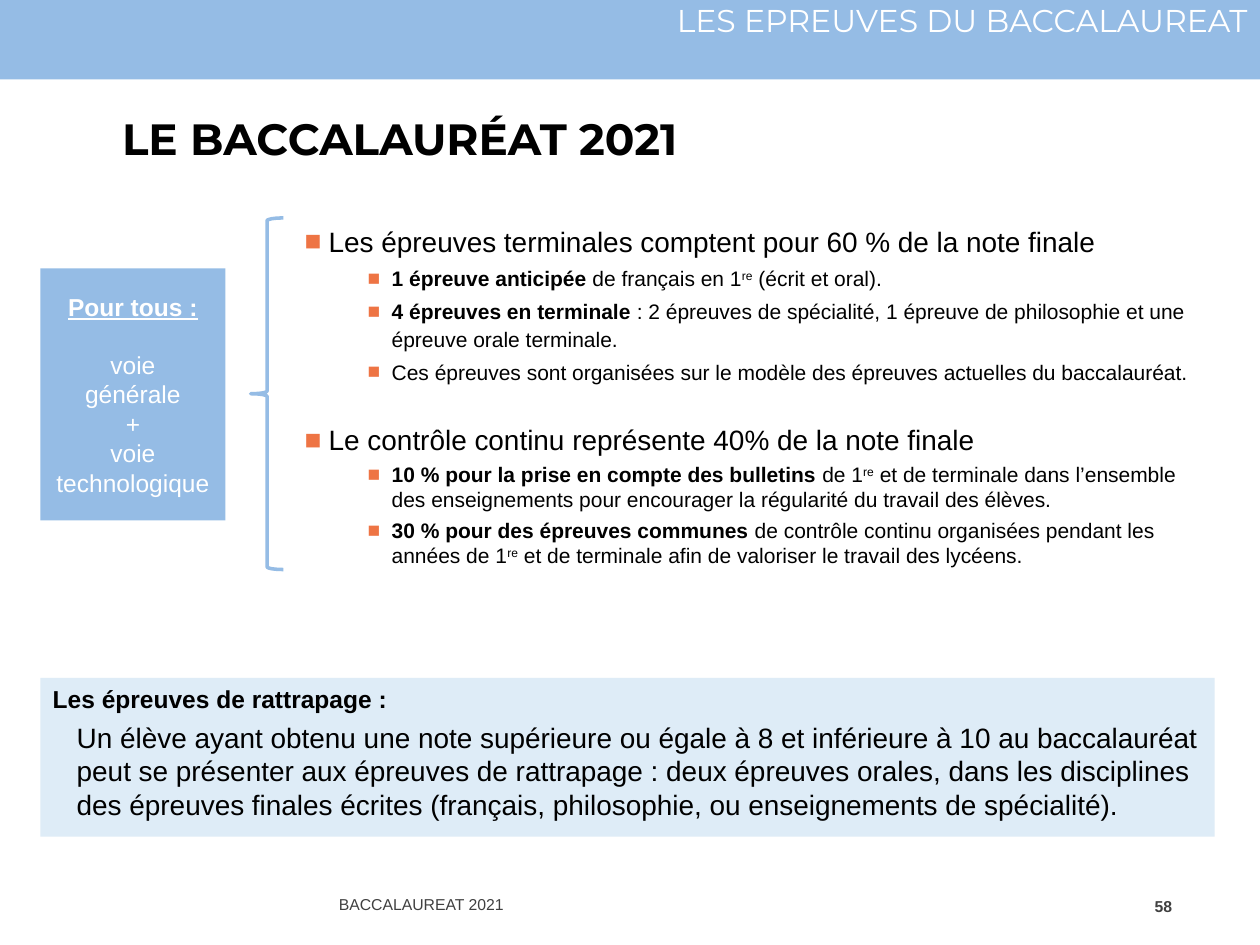
from dataclasses import dataclass
from lxml import etree
from pptx import Presentation
from pptx.dml.color import RGBColor
from pptx.enum import shapes, text
from pptx.oxml import ns
from pptx.util import Inches, Pt

BLUE, PALE, ORANGE = "95BCE5", "DEECF7", "EE7444"
WHITE, BLACK, GREY = "FFFFFF", "000000", "404040"
LEFT, MID, RIGHT = text.PP_ALIGN.LEFT, text.PP_ALIGN.CENTER, text.PP_ALIGN.RIGHT
TOP, CENTRE = text.MSO_ANCHOR.TOP, text.MSO_ANCHOR.MIDDLE
Box = tuple[float, float, float, float]


@dataclass
class Run:
    text: str
    bold: bool = False
    line: bool = False
    sup: bool = False


@dataclass
class Para:
    runs: list[Run]
    size: float
    before: float = 0
    color: str = BLACK
    align: text.PP_ALIGN = LEFT
    font: str = "Arial"
    indent: float = 0
    bullet: bool = False
    space: float | None = None


def rgb(code: str) -> RGBColor:
    return RGBColor.from_string(code)


def mark(para) -> None:
    """Add the orange square bullet to a paragraph."""
    props = para._p.get_or_add_pPr()
    props.set("indent", str(Inches(-0.19)))
    tint = etree.SubElement(props, ns.qn("a:buClr"))
    etree.SubElement(tint, ns.qn("a:srgbClr"), val=ORANGE)
    etree.SubElement(props, ns.qn("a:buFont"), typeface="Arial")
    etree.SubElement(props, ns.qn("a:buChar"), char="■")


def write(shape, paras: list[Para], anchor=TOP) -> None:
    frame = shape.text_frame
    frame.word_wrap = True
    frame.vertical_anchor = anchor
    frame.text = "\n".join("" for _ in paras)
    for para, item in zip(frame.paragraphs, paras):
        para.alignment = item.align
        para.space_before = Pt(item.before)
        if item.space:
            para.line_spacing = item.space
        if item.indent:
            para._p.get_or_add_pPr().set("marL", str(Inches(item.indent)))
        if item.bullet:
            mark(para)
        for part in item.runs:
            run = para.add_run()
            run.text = part.text
            font = run.font
            font.name, font.size = item.font, Pt(item.size)
            font.bold, font.underline = part.bold, part.line
            font.color.rgb = rgb(item.color)
            if part.sup:
                run._r.get_or_add_rPr().set("baseline", "30000")


def label(slide, box: Box, paras: list[Para], anchor=TOP) -> None:
    write(slide.shapes.add_textbox(*map(Inches, box)), paras, anchor)


def panel(slide, box: Box, fill: str):
    shape = slide.shapes.add_shape(shapes.MSO_SHAPE.RECTANGLE, *map(Inches, box))
    shape.shadow.inherit = False
    shape.fill.solid()
    shape.fill.fore_color.rgb = rgb(fill)
    shape.line.fill.background()
    return shape


def brace(slide, box: Box) -> None:
    shape = slide.shapes.add_shape(shapes.MSO_SHAPE.LEFT_BRACE, *map(Inches, box))
    shape.shadow.inherit = False
    shape.fill.background()
    shape.line.color.rgb = rgb(BLUE)
    shape.line.width = Pt(2)


def head(words: str, before: float = 0) -> Para:
    return Para([Run(words)], 16, before, indent=0.19, bullet=True)


def point(*runs: Run, space: float | None = None) -> Para:
    return Para(list(runs), 12, 3, indent=0.69, bullet=True, space=space)


def side(words: str, before: float = 0, bold: bool = False) -> Para:
    return Para([Run(words, bold, bold)], 14, before, WHITE, MID)


def main() -> None:
    deck = Presentation()
    deck.slide_width, deck.slide_height = Inches(10), Inches(7.5)
    slide = deck.slides.add_slide(deck.slide_layouts[6])
    sup = Run("re", sup=True)

    label(slide, (2.59, 6.9, 3.88, 0.56),
          [Para([Run("BACCALAUREAT 2021")], 9, color=GREY)], CENTRE)
    panel(slide, (0, 0, 10, 0.63), BLUE)
    label(slide, (3.93, -0.04, 6.07, 0.4),
          [Para([Run("LES EPREUVES DU BACCALAUREAT")], 18, color=WHITE,
                align=RIGHT, font="Montserrat")])
    label(slide, (0.87, 0.39, 8.62, 1.41),
          [Para([Run("LE BACCALAURÉAT 2021", True)], 25, font="Montserrat")], CENTRE)
    label(slide, (8.91, 6.99, 0.49, 0.4),
          [Para([Run("58", True)], 9, color=GREY, align=RIGHT)], CENTRE)

    write(panel(slide, (0.32, 2.13, 1.47, 2), BLUE), [
        side("Pour tous :", bold=True),
        side("voie", 16.5),
        side("générale"),
        side("+"),
        side("voie technologique"),
    ], CENTRE)
    brace(slide, (1.99, 1.73, 0.26, 2.79))

    label(slide, (2.32, 1.73, 7.32, 2.85), [
        head("Les épreuves terminales comptent pour 60 % de la note finale"),
        point(Run("1 épreuve anticipée ", True), Run("de français en 1"), sup,
              Run(" (écrit et oral)."), space=1.1),
        point(Run("4 épreuves en terminale", True),
              Run(" : 2 épreuves de spécialité, 1 épreuve de philosophie et une "
                  "épreuve orale terminale."), space=1.1),
        point(Run("Ces épreuves sont organisées sur le modèle des épreuves "
                  "actuelles du baccalauréat."), space=1.1),
        head("Le contrôle continu représente 40% de la note finale", 22),
        point(Run("10 % pour la prise en compte des bulletins ", True),
              Run("de 1"), sup,
              Run(" et de terminale dans l’ensemble des enseignements pour "
                  "encourager la régularité du travail des élèves.")),
        point(Run("30 % pour des épreuves communes ", True),
              Run("de contrôle continu organisées pendant les années de 1"), sup,
              Run(" et de terminale afin de valoriser le travail des lycéens.")),
    ])

    write(panel(slide, (0.32, 5.38, 9.32, 1.26), PALE), [
        Para([Run("Les épreuves de rattrapage :", True)], 14),
        Para([Run("Un élève ayant obtenu une note supérieure ou égale à 8 et "
                  "inférieure à 10 au baccalauréat peut se présenter aux épreuves "
                  "de rattrapage : deux épreuves orales, dans les disciplines des "
                  "épreuves finales écrites (français, philosophie, ou "
                  "enseignements de spécialité).")], 16, 4, indent=0.19),
    ])
    deck.save("out.pptx")


if __name__ == "__main__":
    main()
